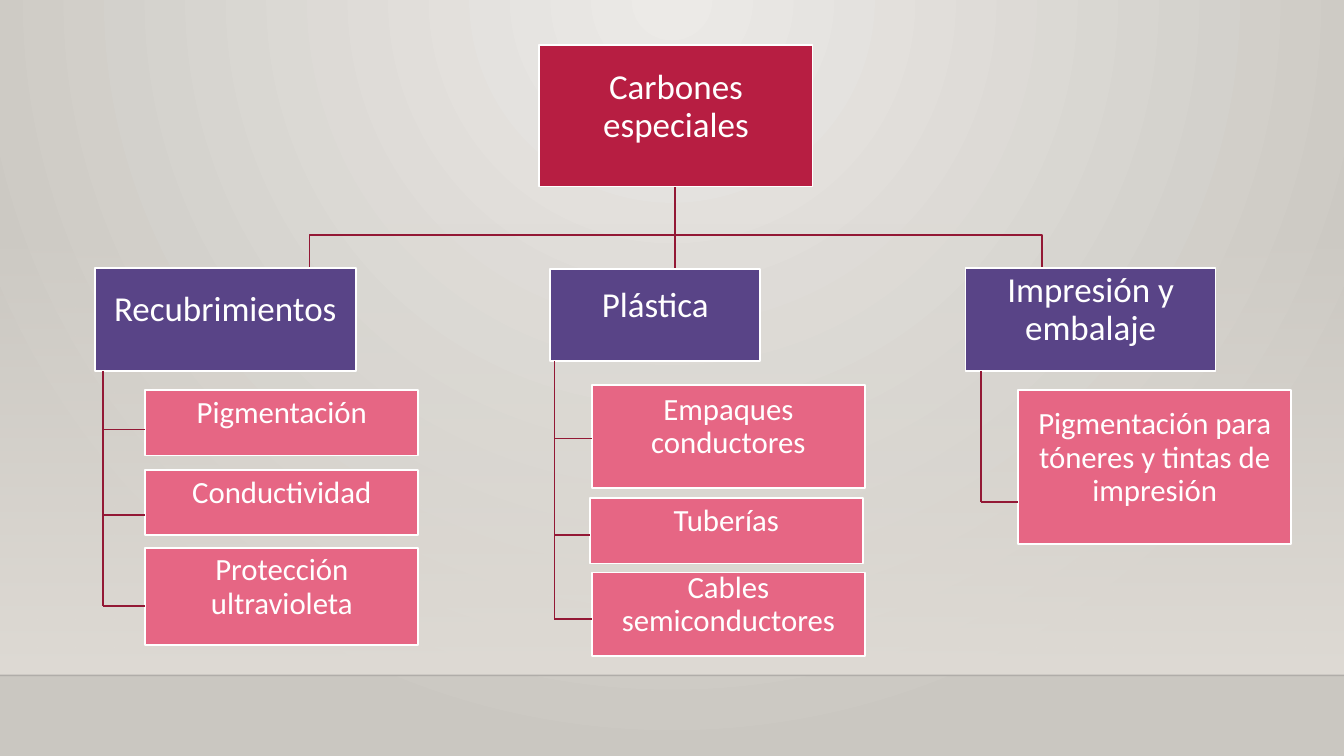
import lxml.etree
import pptx
import pptx.dml.color
import pptx.enum.shapes
import pptx.enum.text
import pptx.oxml
import pptx.oxml.ns
import pptx.util

THEME = {
    "font": "Calibri", "text": "FFFFFF", "edge": "FFFFFF", "link": "931835",
    "root": "B71E42", "branch": "594487", "leaf": "E66684",
    "size": {"root": 25, "branch": 25, "leaf": 22},
    "light": "ECEAE7", "dark": "CAC7C1", "wall": "DFDBD5", "floor": "000001",
    "stroke": pptx.util.Pt(1.25),
}
qn = pptx.oxml.ns.qn
rgb = pptx.dml.color.RGBColor.from_string

deck = pptx.Presentation()
deck.slide_width = pptx.util.Inches(13.33)
deck.slide_height = pptx.util.Inches(7.5)
slide = deck.slides.add_slide(deck.slide_layouts[6])
shapes = slide.shapes

# The grid has 100 columns and 100 rows
COL = deck.slide_width / 100
ROW = deck.slide_height / 100


def add_box(level, label, left, top, width, height):
    box = shapes.add_shape(pptx.enum.shapes.MSO_SHAPE.RECTANGLE, round(left * COL),
                           round(top * ROW), round(width * COL), round(height * ROW))
    box.shadow.inherit = False
    box.fill.solid()
    box.fill.fore_color.rgb = rgb(THEME[level])
    box.line.color.rgb = rgb(THEME["edge"])
    box.line.width = THEME["stroke"]
    frame = box.text_frame
    frame.word_wrap = True
    frame.vertical_anchor = pptx.enum.text.MSO_ANCHOR.MIDDLE
    frame.margin_left = frame.margin_right = frame.margin_top = pptx.util.Inches(0.02)
    frame.margin_bottom = pptx.util.Inches(0.2)
    paragraph = frame.paragraphs[0]
    paragraph.text = label
    paragraph.alignment = pptx.enum.text.PP_ALIGN.CENTER
    paragraph.line_spacing = 0.9
    paragraph.font.name = THEME["font"]
    paragraph.font.size = pptx.util.Pt(THEME["size"][level])
    paragraph.font.color.rgb = rgb(THEME["text"])


def add_link(x1, y1, x2, y2, color=THEME["link"], width=THEME["stroke"]):
    link = shapes.add_connector(pptx.enum.shapes.MSO_CONNECTOR.STRAIGHT, round(x1 * COL),
                                round(y1 * ROW), round(x2 * COL), round(y2 * ROW))
    link.line.color.rgb = rgb(color)
    link.line.width = width
    lxml.etree.SubElement(link._element.spPr, qn("a:effectLst"))
    return link


# Backdrop: a radial glow, a wall that fades in, and the floor line
FLOOR, WALL_TOP = 89.33, 29.47
slide.background.fill.gradient()
wall = shapes.add_shape(pptx.enum.shapes.MSO_SHAPE.RECTANGLE, 0, round(WALL_TOP * ROW),
                        deck.slide_width, round((FLOOR - WALL_TOP) * ROW))
wall.shadow.inherit = False
wall.line.fill.background()
wall.fill.gradient()
glow_fill, wall_fill = slide._element.iter(qn("a:gradFill"))
gradients = (
    (glow_fill, THEME["light"], 100, THEME["dark"],
     '<a:path path="circle"><a:fillToRect l="43000" t="0" r="43000" b="100000"/></a:path>'),
    (wall_fill, THEME["wall"], 0, THEME["wall"], '<a:lin ang="5400000" scaled="0"/>'),
)
for gradient, start, opacity, end, direction in gradients:
    source = pptx.oxml.parse_xml(
        f'<a:gradFill {pptx.oxml.ns.nsdecls("a")}><a:gsLst>'
        f'<a:gs pos="0"><a:srgbClr val="{start}"><a:alpha val="{opacity * 1000}"/></a:srgbClr></a:gs>'
        f'<a:gs pos="100000"><a:srgbClr val="{end}"/></a:gs></a:gsLst>{direction}</a:gradFill>')
    gradient[:] = list(source)

floor = add_link(0, FLOOR, 100, FLOOR, THEME["floor"], pptx.util.Pt(1))
floor_color = next(floor._element.iter(qn("a:srgbClr")))
lxml.etree.SubElement(floor_color, qn("a:alpha"), val="20000")

# Links from the root to its three branches
TRUNK, ROOT_TOP, ROOT_BOTTOM, BUS, BRANCH_TOP = 50.25, 6, 24.67, 31.07, 35.47
for drop in (77.55, 23.03):
    outline = shapes.build_freeform(round(TRUNK * COL), round(ROOT_BOTTOM * ROW))
    corners = ((TRUNK, BUS), (drop, BUS), (drop, BRANCH_TOP))
    outline.add_line_segments([(round(x * COL), round(y * ROW)) for x, y in corners], close=False)
    elbow = outline.convert_to_shape()
    elbow.shadow.inherit = False
    elbow.fill.background()
    elbow.line.color.rgb = rgb(THEME["link"])
    elbow.line.width = THEME["stroke"]
add_link(TRUNK, ROOT_BOTTOM, TRUNK, BRANCH_TOP)

LEAF_WIDTH = 20.33
add_box("root", "Carbones especiales", 40.13, ROOT_TOP, LEAF_WIDTH, ROOT_BOTTOM - ROOT_TOP)

# Branch: label, left, top, width, height, spine; leaf: label, left, top, height, link row
branches = (
    (("Recubrimientos", 7.05, BRANCH_TOP, 19.42, 13.6, 7.65), (
        ("Pigmentación", 10.8, 51.6, 8.67, 56.8),
        ("Conductividad", 10.8, 62.13, 8.67, 68.13),
        ("Protección ultravioleta", 10.8, 72.53, 12.8, 80.13))),
    (("Plástica", 40.95, 35.6, 15.6, 12.13, 41.25), (
        ("Empaques conductores", 44.03, 50.93, 13.6, 58),
        ("Tuberías", 43.88, 65.87, 8.67, 70.8),
        ("Cables semiconductores", 44.03, 75.73, 11.07, 81.87))),
    (("Impresión y embalaje", 71.85, BRANCH_TOP, 18.6, 13.6, 72.98), (
        ("Pigmentación para tóneres y tintas de impresión", 75.75, 51.6, 20.4, 66.4),)),
)
for (branch, left, top, width, height, spine), leaves in branches:
    add_box("branch", branch, left, top, width, height)
    for leaf, leaf_left, leaf_top, leaf_height, link_row in leaves:
        add_box("leaf", leaf, leaf_left, leaf_top, LEAF_WIDTH, leaf_height)
        add_link(leaf_left, link_row, spine, link_row)
    add_link(spine, top + height, spine, leaves[-1][-1])

deck.save("out.pptx")
